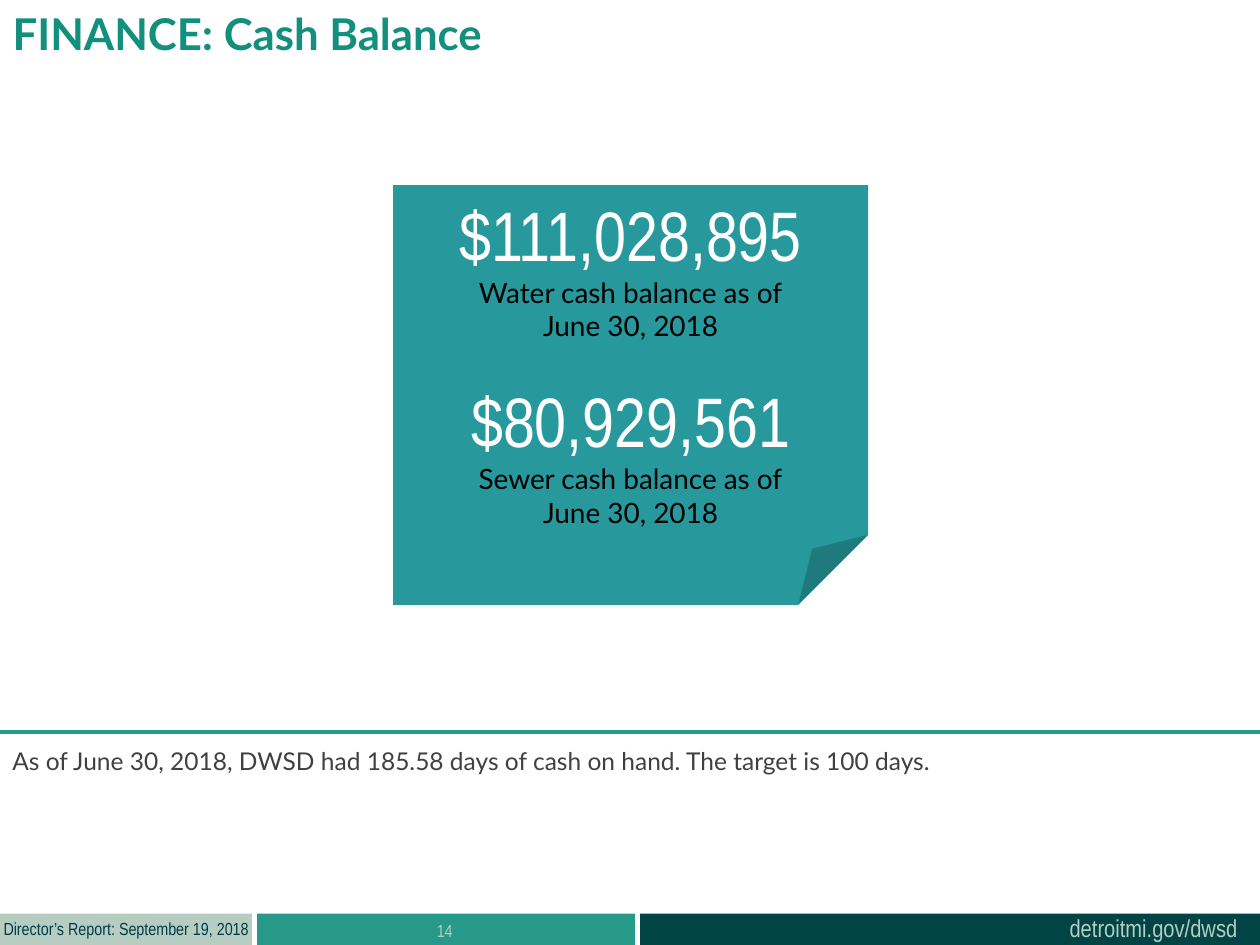
from copy import deepcopy
from pptx import Presentation
from pptx.dml.color import RGBColor as RGB
from pptx.enum.shapes import MSO_CONNECTOR as LINK, MSO_SHAPE as SHAPE
from pptx.enum.text import MSO_ANCHOR as ANCHOR, PP_ALIGN as ALIGN
from pptx.oxml.ns import qn
from pptx.oxml.xmlchemy import OxmlElement as Element
from pptx.util import Inches, Pt

NARROW, LATO = "Arial Narrow", "Lato"
TEAL, MINT = "279989", "B7CDC2"
TITLE = ("FINANCE: Cash Balance", (0, 0, 7.59, 0.77))
BARS = [(2.04, 3, TEAL), (5.08, 4.92, "004445"), (0, 2, MINT)]
NOTES = [
    ("detroitmi.gov/dwsd", (8.39, 7.2, 1.55, 0.34), (NARROW, 14, MINT), ALIGN.LEFT, False),
    ("Director’s Report: September 19, 2018", (-0.07, 7.24, 2.16, 0.27),
     (NARROW, 10, "003B49"), ALIGN.LEFT, False),
    ("14", (2.03, 7.25, 3, 0.25), (NARROW, 10, MINT), ALIGN.CENTER, True),
    ("As of June 30, 2018, DWSD had 185.58 days of cash on hand. The target is 100 days.",
     (0, 5.87, 10, 0.34), (LATO, 14, "404040"), ALIGN.LEFT, True),
]
CARD = (3.12, 1.47, 3.77, 3.33)
FUNDS = [("$111,028,895", "Water cash balance as of\nJune 30, 2018"),
         ("$80,929,561", "Sewer cash balance as of\nJune 30, 2018")]
SUM, LABEL = (NARROW, 40, "FFFFFF"), (LATO, 16, "000000")


def color(code):
    return RGB.from_string(code)


def write(para, text, style, align=ALIGN.LEFT, bold=False, before=0):
    face, size, ink = style
    para.text = text
    for key, value in {"alignment": align, "space_before": Pt(before)}.items():
        setattr(para, key, value)
    for run in para.runs:
        for key, value in {"name": face, "size": Pt(size), "bold": bold}.items():
            setattr(run.font, key, value)
        run.font.color.rgb = color(ink)
    for gap in para._p.findall(qn("a:br")):
        gap.append(deepcopy(para.runs[0]._r.rPr))


def block(slide, kind, box, fill):
    shape = slide.shapes.add_shape(kind, *map(Inches, box))
    shape.shadow.inherit = False
    shape.fill.solid()
    shape.fill.fore_color.rgb = color(fill)
    shape.line.fill.background()
    return shape


def main():
    """Build the cash balance slide."""
    deck = Presentation()
    deck.slide_width, deck.slide_height = Inches(10), Inches(7.5)
    slide = deck.slides.add_slide(deck.slide_layouts[5])
    for left, width, fill in BARS:
        block(slide, SHAPE.RECTANGLE, (left, 7.25, width, 0.25), fill)
    for text, box, style, align, wrap in NOTES:
        frame = slide.shapes.add_textbox(*map(Inches, box)).text_frame
        frame.word_wrap = wrap
        write(frame.paragraphs[0], text, style, align)

    text, box = TITLE
    title = slide.shapes.title
    for key, value in zip(("left", "top", "width", "height"), box):
        setattr(title, key, Inches(value))
    title.text_frame.vertical_anchor = ANCHOR.TOP
    write(title.text_frame.paragraphs[0], text, (LATO, 25, "138F7E"), bold=True)

    rule = slide.shapes.add_connector(LINK.STRAIGHT, *map(Inches, (10, 5.81, 0, 5.81)))
    rule.line.color.rgb = color(TEAL)
    rule.line.width = Pt(2.25)
    rule._element.spPr.append(Element("a:effectLst"))

    frame = block(slide, SHAPE.FOLDED_CORNER, CARD, "27999D").text_frame
    frame.word_wrap = True
    frame.vertical_anchor = ANCHOR.MIDDLE
    for i, (total, label) in enumerate(FUNDS):
        head = frame.add_paragraph() if i else frame.paragraphs[0]
        write(head, total, SUM, ALIGN.CENTER, before=20 * i)
        write(frame.add_paragraph(), label, LABEL, ALIGN.CENTER)
    deck.save("out.pptx")


if __name__ == "__main__":
    main()
